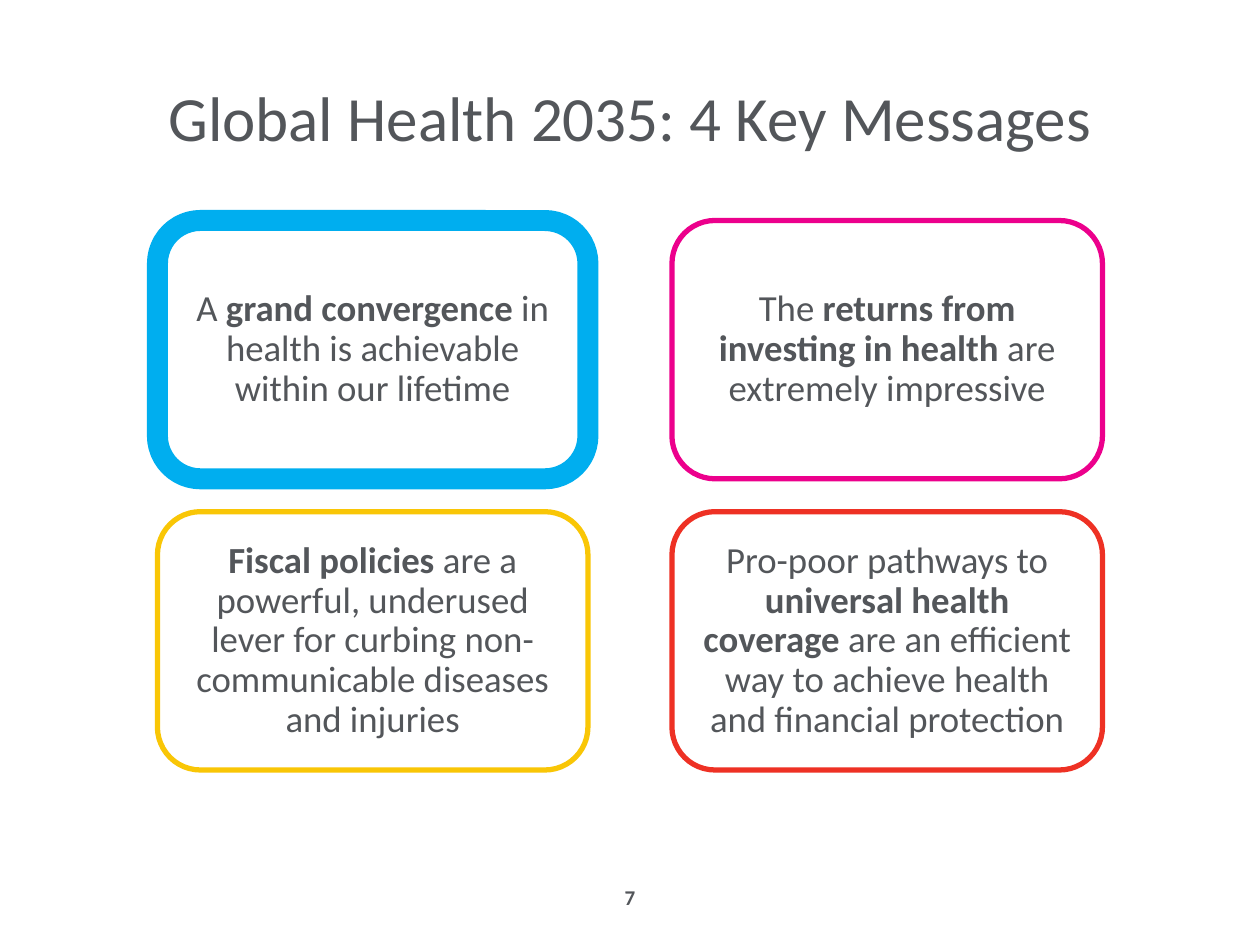
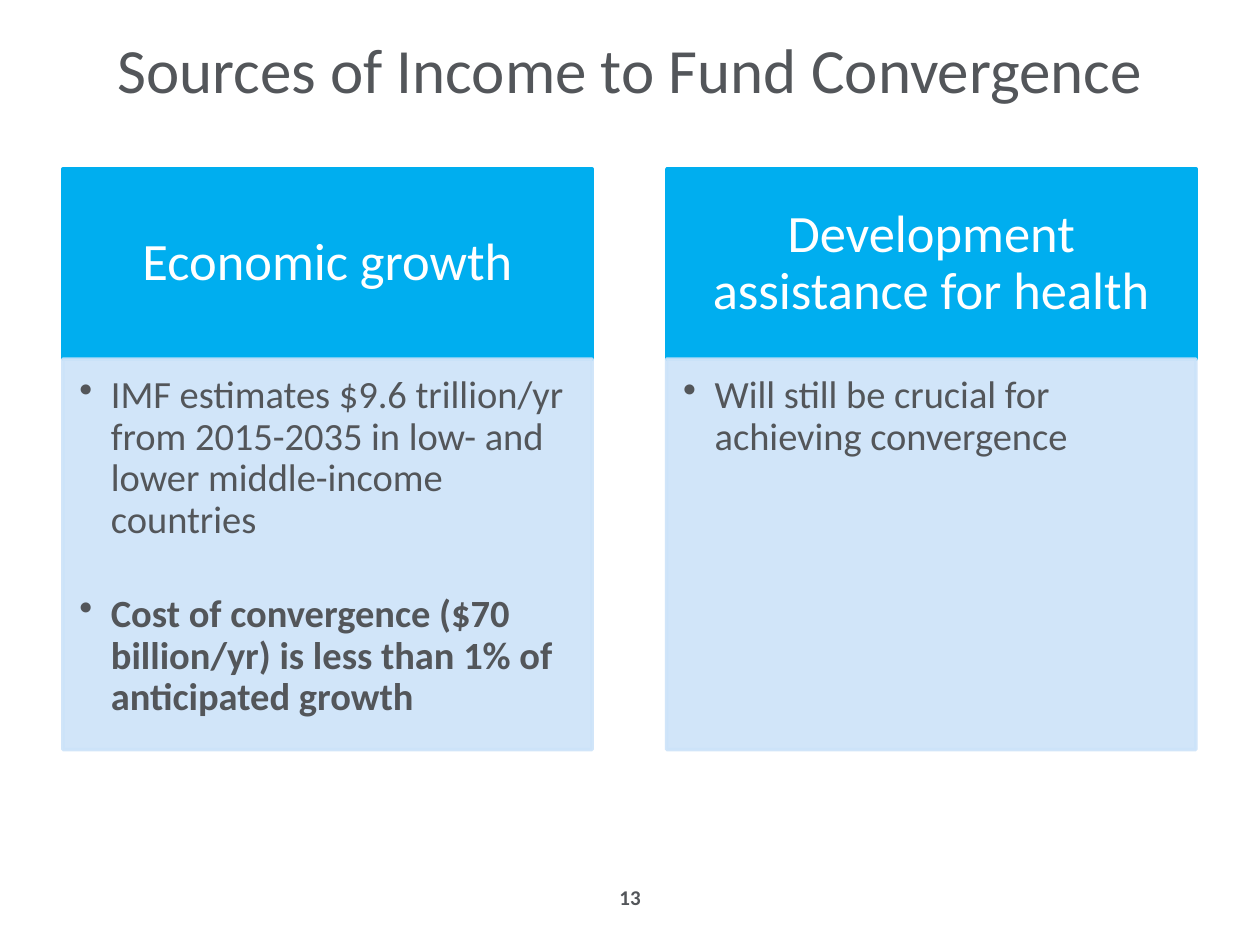
from dataclasses import dataclass
from lxml.etree import SubElement
from pptx import Presentation
from pptx.dml.color import RGBColor
from pptx.enum.shapes import MSO_SHAPE
from pptx.enum.text import MSO_ANCHOR, PP_ALIGN
from pptx.oxml.ns import qn
from pptx.util import Pt


@dataclass(frozen=True)
class Theme:
    font: str = "Calibri"
    ink: str = "53565A"
    white: str = "FFFFFF"
    blue: str = "00AEEF"
    pink: str = "EC008C"
    gold: str = "F9C606"
    red: str = "EE3124"
    pale: str = "CCE3F9"
    title: int = 36
    head: int = 30
    body: int = 22
    card: int = 21
    foot: int = 12


THEME = Theme()

# Content: a run is (text, bold)
KEYS = {
    "title": "Global Health 2035: 4 Key Messages",
    "top": 21.6,
    "page": "7",
    "cards": [
        (THEME.blue, 12, [("A ", False), ("grand convergence", True),
                          (" in health is achievable within our lifetime", False)]),
        (THEME.pink, 3, [("The ", False), ("returns from investing in health", True),
                         (" are extremely impressive", False)]),
        (THEME.gold, 3, [("Fiscal policies ", True),
                         ("are a powerful, underused lever for curbing "
                          "non-communicable diseases and injuries", False)]),
        (THEME.red, 3, [("Pro-poor pathways to ", False),
                        ("universal health coverage ", True),
                        ("are an efficient way to achieve health "
                         "and financial protection", False)]),
    ],
}
FUNDS = {
    "title": "Sources of Income to Fund Convergence",
    "top": -5.8,
    "page": "13",
    "panels": [
        ("Economic growth", [
            ("IMF estimates $9.6 trillion/yr from 2015-2035 in low- and "
             "lower middle-income countries", False),
            ("Cost of convergence ($70 billion/yr) is less than 1% of "
             "anticipated growth", True)]),
        ("Development assistance for health", [
            ("Will still be crucial for achieving convergence", False)]),
    ],
}


def rgb(code):
    return RGBColor.from_string(code)


def frame(shape, pads, anchor=MSO_ANCHOR.MIDDLE):
    text = shape.text_frame
    text.word_wrap = True
    text.vertical_anchor = anchor
    (text.margin_left, text.margin_top,
     text.margin_right, text.margin_bottom) = [Pt(pad) for pad in pads]
    return text


def write(para, runs, size, color=THEME.ink, align=PP_ALIGN.CENTER):
    para.alignment = align
    for words, bold in runs:
        run = para.add_run()
        run.text = words
        font = run.font
        font.name, font.size, font.bold = THEME.font, Pt(size), bold
        font.color.rgb = rgb(color)


def label(slide, place, words, size, bold=False):
    box = slide.shapes.add_textbox(*[Pt(n) for n in place])
    write(frame(box, (7.2, 3.6, 7.2, 3.6)).paragraphs[0], [(words, bold)], size)


def block(slide, kind, place, fill, line, width):
    shape = slide.shapes.add_shape(kind, *[Pt(n) for n in place])
    shape.shadow.inherit = False
    shape.fill.solid()
    shape.fill.fore_color.rgb = rgb(fill)
    shape.line.color.rgb = rgb(line)
    shape.line.width = Pt(width)
    return shape


def fade(shape, percent):
    # Opacity of both fill and outline
    for color in shape.fill._xPr.iter(qn("a:srgbClr")):
        SubElement(color, qn("a:alpha"), val=str(percent * 1000))


def bullet(para):
    props = para._p.get_or_add_pPr()
    props.set("marL", str(Pt(18)))
    props.set("indent", str(-Pt(18)))
    SubElement(props, qn("a:buChar"), char="•")


def start(deck, data):
    # Title and page number shared by every slide
    slide = deck.slides.add_slide(deck.slide_layouts[6])
    label(slide, (36, data["top"], 648, 90), data["title"], THEME.title)
    label(slide, (276, 498, 168, 29), data["page"], THEME.foot, True)
    return slide


def cards(deck, data):
    # Two by two grid of messages
    slide = start(deck, data)
    for i, (color, width, runs) in enumerate(data["cards"]):
        row, col = divmod(i, 2)
        place = (90 + col * 294, 126 + row * 166.4, 246, 147.6)
        card = block(slide, MSO_SHAPE.ROUNDED_RECTANGLE, place,
                     THEME.white, color, width)
        para = frame(card, (6.5,) * 4).paragraphs[0]
        para.line_spacing = 0.9
        write(para, runs, THEME.card)


def panels(deck, data):
    # Columns with a heading over a bullet list
    slide = start(deck, data)
    wide, top, high = 302.4, 96.5, 108.7
    for i, (name, points) in enumerate(data["panels"]):
        left = 36 + i * 345
        head = block(slide, MSO_SHAPE.RECTANGLE, (left, top, wide, high),
                     THEME.blue, THEME.blue, 2)
        para = frame(head, (16.6, 9.4, 16.6, 9.4)).paragraphs[0]
        para.line_spacing = 0.9
        write(para, [(name, False)], THEME.head, THEME.white)

        body = block(slide, MSO_SHAPE.RECTANGLE, (left, top + high, wide, 223.2),
                     THEME.pale, THEME.pale, 2)
        fade(body, 90)
        text = frame(body, (9.4, 9.4, 12.2, 13.7), MSO_ANCHOR.TOP)
        for j, point in enumerate(points):
            para = text.add_paragraph() if j else text.paragraphs[0]
            bullet(para)
            para.line_spacing = 0.9
            para.space_before = Pt(30 if j else 0)
            write(para, [point], THEME.body, align=PP_ALIGN.LEFT)
            para.font.size = Pt(THEME.body)
            para.font.color.rgb = rgb(THEME.ink)


def main():
    deck = Presentation()
    deck.slide_width, deck.slide_height = Pt(720), Pt(540)
    cards(deck, KEYS)
    panels(deck, FUNDS)
    deck.save("out.pptx")


if __name__ == "__main__":
    main()
